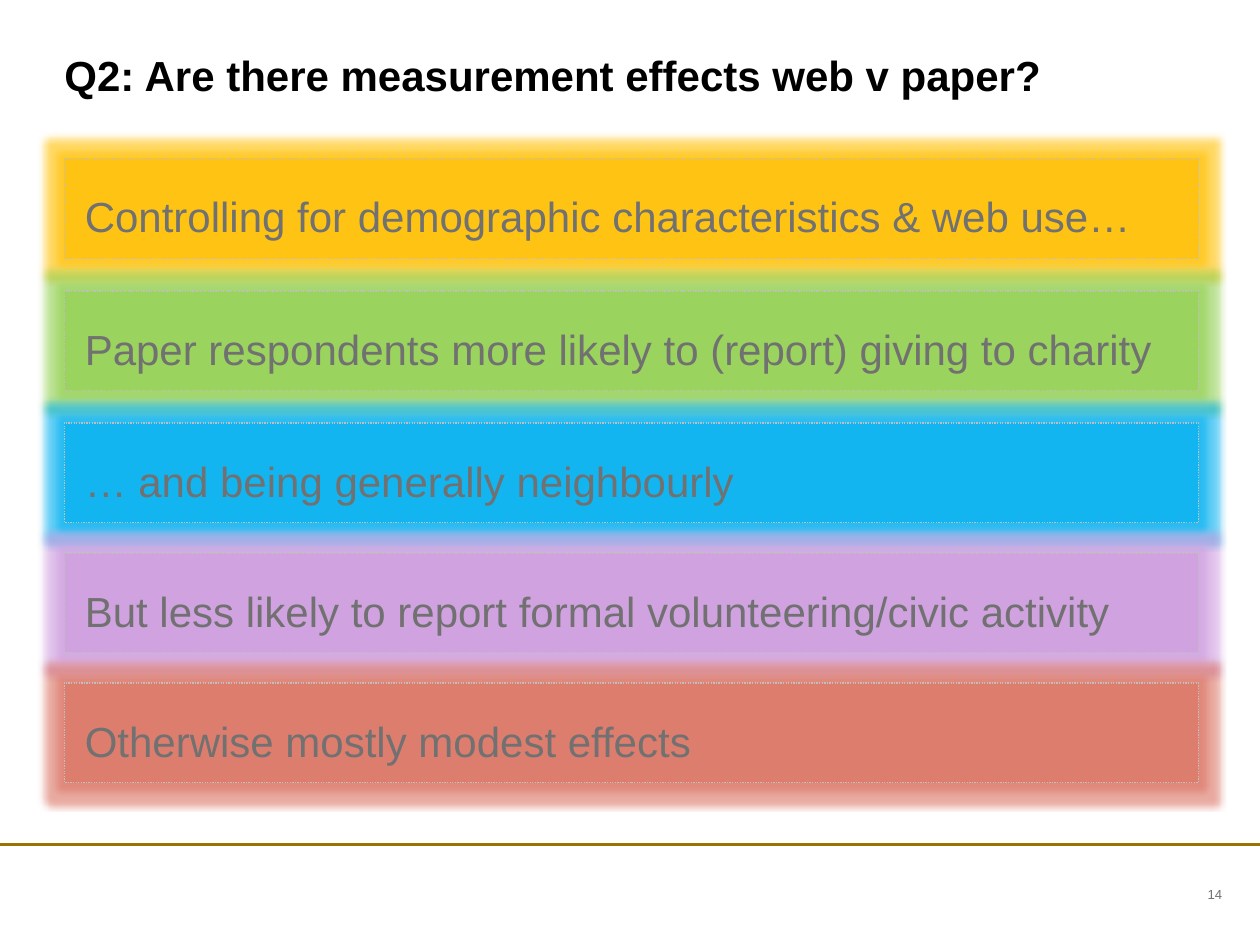
from dataclasses import dataclass

from lxml import etree
from pptx import Presentation
from pptx import util as u
from pptx.dml.color import RGBColor
from pptx.enum import dml, shapes, text
from pptx.oxml.ns import qn


@dataclass(frozen=True)
class Theme:
    font: str = "Arial"
    title_color: str = "000000"
    body_color: str = "717171"
    border: str = "BFBFBF"
    rule: str = "997300"
    title_size: float = 24
    body_size: float = 24
    number_size: float = 7.5
    fill_alpha: int = 50
    glow_alpha: int = 60
    glow_radius: float = 0.28


FINDINGS = [
    (3.2, "FFC000", "Controlling for demographic characteristics & web use…"),
    (5.87, "92D050", "Paper respondents more likely to (report) giving to charity"),
    (8.53, "00B0F0", "… and being generally neighbourly"),
    (11.15, "CD9CDF", "But less likely to report formal volunteering/civic activity"),
    (13.77, "DB7363", "Otherwise mostly modest effects"),
]


def add_alpha(color, percent):
    etree.SubElement(color, qn("a:alpha"), val=str(percent * 1000))


class Deck:
    """Holds the theme and the slide being filled."""

    def __init__(self, prs, theme):
        self.theme = theme
        self.s = prs.slides.add_slide(prs.slide_layouts[5])

    def set_text(self, sp, words, size, color, inset=0, bold=False,
                 align=text.PP_ALIGN.LEFT, anchor=text.MSO_ANCHOR.MIDDLE,
                 fit=text.MSO_AUTO_SIZE.NONE, **para):
        tf = sp.text_frame
        frame = dict(word_wrap=True, vertical_anchor=anchor, auto_size=fit)
        for side in ("left", "top", "right", "bottom"):
            frame[f"margin_{side}"] = u.Cm(inset)
        p = tf.paragraphs[0]
        r = p.add_run()
        r.text = words
        font = dict(name=self.theme.font, size=u.Pt(size), bold=bold)
        for target, values in ((tf, frame), (p, dict(alignment=align, **para)),
                               (r.font, font)):
            for name, value in values.items():
                setattr(target, name, value)
        r.font.color.rgb = RGBColor.from_string(color)

    def title(self, words):
        sp = self.s.shapes.title
        box = dict(left=1.3, top=1.0, width=22.86, height=2.0)
        for name, value in box.items():
            setattr(sp, name, u.Cm(value))
        self.set_text(sp, words, self.theme.title_size, self.theme.title_color,
                      bold=True, anchor=text.MSO_ANCHOR.TOP)

    def bar(self, top, color, words):
        t = self.theme
        sp = self.s.shapes.add_shape(shapes.MSO_SHAPE.RECTANGLE, u.Cm(1.3),
                                     u.Cm(top), u.Cm(22.86), u.Cm(2.01))
        sp.fill.solid()
        sp.fill.fore_color.rgb = RGBColor.from_string(color)
        add_alpha(sp._element.spPr.find(f"{qn('a:solidFill')}/{qn('a:srgbClr')}"),
                  t.fill_alpha)
        sp.line.color.rgb = RGBColor.from_string(t.border)
        sp.line.width = u.Pt(0.75)
        sp.line.dash_style = dml.MSO_LINE.ROUND_DOT
        self.glow(sp, color)
        self.set_text(sp, words, t.body_size, t.body_color, inset=0.41,
                      fit=text.MSO_AUTO_SIZE.SHAPE_TO_FIT_TEXT,
                      line_spacing=1.3, space_after=u.Pt(12))

    def glow(self, sp, color):
        sp.shadow.inherit = False
        effects = sp._element.spPr.find(qn("a:effectLst"))
        glow = etree.SubElement(effects, qn("a:glow"),
                                rad=str(int(u.Cm(self.theme.glow_radius))))
        add_alpha(etree.SubElement(glow, qn("a:srgbClr"), val=color),
                  self.theme.glow_alpha)

    def rule(self, top):
        line = self.s.shapes.add_connector(shapes.MSO_CONNECTOR.STRAIGHT, 0,
                                           u.Cm(top), u.Cm(25.4), u.Cm(top))
        line.line.color.rgb = RGBColor.from_string(self.theme.rule)
        line.line.width = u.Pt(1.5)
        etree.SubElement(line._element.spPr, qn("a:effectLst"))

    def page_number(self, number):
        sp = self.s.shapes.add_textbox(u.Cm(22.61), u.Cm(17.75),
                                       u.Cm(2.03), u.Cm(0.56))
        self.set_text(sp, number, self.theme.number_size, self.theme.body_color,
                      align=text.PP_ALIGN.RIGHT)


def main():
    prs = Presentation()
    prs.slide_width, prs.slide_height = u.Cm(25.4), u.Cm(19.05)
    deck = Deck(prs, Theme())
    deck.rule(17.02)
    deck.page_number("14")
    deck.title("Q2: Are there measurement effects web v paper?")
    for finding in FINDINGS:
        deck.bar(*finding)
    prs.save("out.pptx")


if __name__ == "__main__":
    main()
